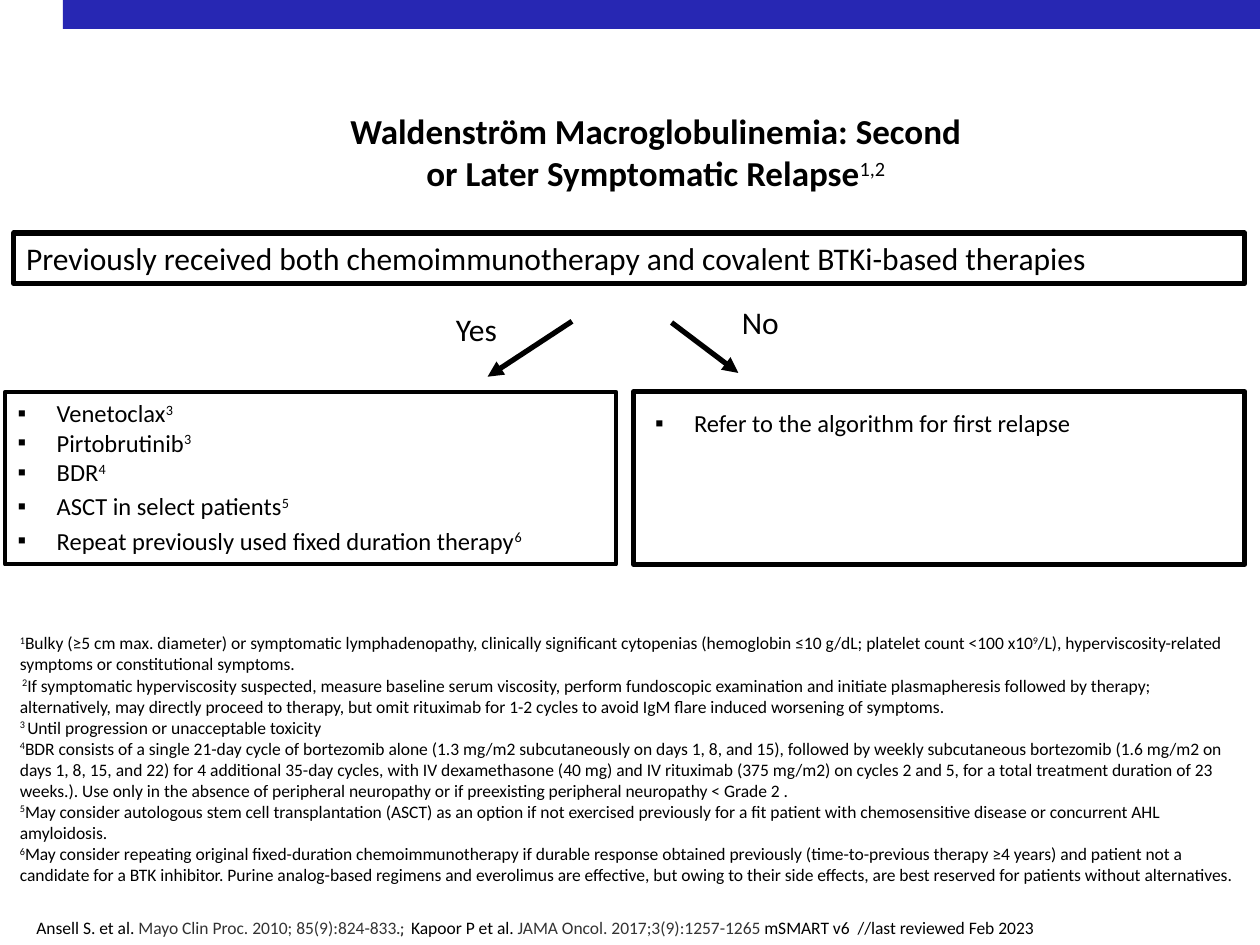
from dataclasses import dataclass

from lxml import etree
from pptx import Presentation
from pptx import util as u
from pptx.dml import color
from pptx.enum import shapes, text
from pptx.oxml import ns

Inches = u.Inches


@dataclass(frozen=True)
class Theme:
    """Colours, fonts and type sizes of the slide."""
    ink: str = "000000"
    citation: str = "333333"
    bar: str = "2727B3"
    font: str = "Calibri"
    separator_font: str = "Roboto"
    title: int = 20
    statement: int = 18
    item: int = 14
    note: int = 10
    separator: int = 8


THEME = Theme()

TREATMENTS = ["Venetoclax^3", "Pirtobrutinib^3", "BDR^4", "ASCT in select patients^5",
              "Repeat previously used fixed duration therapy^6"]
FOOTNOTES = [
    "^1^Bulky (≥5 cm max. diameter) or symptomatic lymphadenopathy, clinically significant "
    "cytopenias (hemoglobin ≤10 g/dL; platelet count <100 x10^9^/L), hyperviscosity-related "
    "symptoms or constitutional symptoms.",
    "^ 2^If symptomatic hyperviscosity suspected, measure baseline serum viscosity, perform "
    "fundoscopic examination and initiate plasmapheresis followed by therapy; alternatively, "
    "may directly proceed to therapy, but omit rituximab for 1-2 cycles to avoid IgM flare "
    "induced worsening of symptoms.",
    "^3 ^Until progression or unacceptable toxicity",
    "^4^BDR consists of a single 21-day cycle of bortezomib alone (1.3 mg/m2 subcutaneously on "
    "days 1, 8, and 15), followed by weekly subcutaneous bortezomib (1.6 mg/m2 on days 1, 8, "
    "15, and 22) for 4 additional 35-day cycles, with IV dexamethasone (40 mg) and IV rituximab "
    "(375 mg/m2) on cycles 2 and 5, for a total treatment duration of 23 weeks.). Use only in "
    "the absence of peripheral neuropathy or if preexisting peripheral neuropathy < Grade 2 .",
    "^5^May consider autologous stem cell transplantation (ASCT) as an option if not exercised "
    "previously for a fit patient with chemosensitive disease or concurrent AHL amyloidosis.",
    "^6^May consider repeating original fixed-duration chemoimmunotherapy if durable response "
    "obtained previously (time-to-previous therapy ≥4 years) and patient not a candidate for a "
    "BTK inhibitor. Purine analog-based regimens and everolimus are effective, but owing to "
    "their side effects, are best reserved for patients without alternatives.",
]
REFERENCES = [
    ("Ansell S. et al. ", {}),
    ("Mayo Clin Proc. 2010; 85(9):824-833", {"ink": THEME.citation}),
    (".;  ", {"ink": THEME.citation, "size": THEME.separator, "bold": True,
              "font": THEME.separator_font}),
    ("Kapoor P et al. ", {}),
    ("JAMA Oncol. 2017;3(9):1257-1265 ", {"ink": THEME.citation}),
    ("mSMART v6  //last reviewed Feb 2023", {}),
]


def write(paragraph, content, size=THEME.note, ink=THEME.ink, bold=False, font=THEME.font):
    """Add text whose parts between carets are superscript and never bold."""
    for index, part in enumerate(content.split("^")):
        if not part:
            continue
        raised = index % 2 == 1
        run = paragraph.add_run()
        run.text = part
        run.font.size = u.Pt(size)
        run.font.name = font
        run.font.bold = bold and not raised
        run.font.color.rgb = color.RGBColor.from_string(ink)
        if raised:
            run.font._element.set("baseline", "30000")


def place(shape, box):
    """Move a shape to a box of left, top, width and height in inches."""
    shape.left, shape.top, shape.width, shape.height = map(Inches, box)


def prepare(shape, anchor=text.MSO_ANCHOR.TOP, wrap=True):
    """Set wrapping and anchoring and return the text frame."""
    frame = shape.text_frame
    frame.word_wrap = wrap
    frame.auto_size = text.MSO_AUTO_SIZE.NONE
    frame.vertical_anchor = anchor
    return frame


def outline(shape, weight):
    """Give a shape a plain outline without a fill."""
    shape.fill.background()
    shape.line.color.rgb = color.RGBColor.from_string(THEME.ink)
    shape.line.width = u.Pt(weight)


def add_box(slide, box):
    """Add a rectangle without a shadow."""
    rectangle = slide.shapes.add_shape(shapes.MSO_SHAPE.RECTANGLE, *map(Inches, box))
    rectangle.shadow.inherit = False
    return rectangle


def add_text(slide, box, **options):
    """Add a text box and return its text frame."""
    return prepare(slide.shapes.add_textbox(*map(Inches, box)), **options)


def write_lines(frame, lines, bulleted=False, spaced_from=None, **style):
    """Write one paragraph per line, with optional bullets and spacing."""
    for index, line in enumerate(lines):
        paragraph = frame.paragraphs[0] if index == 0 else frame.add_paragraph()
        if bulleted:
            properties = paragraph._p.get_or_add_pPr()
            properties.set("marL", str(Inches(0.31)))
            properties.set("indent", str(-Inches(0.31)))
            etree.SubElement(properties, ns.qn("a:buFont")).set("typeface", "Arial")
            etree.SubElement(properties, ns.qn("a:buChar")).set("char", "▪")
        spaced = spaced_from is not None and index >= spaced_from
        paragraph.space_before = u.Pt(0.2 * THEME.item if spaced else 0)
        write(paragraph, line, **style)


def add_bar(slide, box):
    """Draw the coloured bar at the top."""
    bar = add_box(slide, box)
    bar.fill.solid()
    bar.fill.fore_color.rgb = color.RGBColor.from_string(THEME.bar)
    bar.line.fill.background()


def add_title(slide, box):
    """Fill the title placeholder."""
    title = slide.shapes.title
    place(title, box)
    frame = prepare(title)
    frame.paragraphs[0].alignment = text.PP_ALIGN.CENTER
    write(frame.paragraphs[0],
          "Waldenström Macroglobulinemia: Second or Later Symptomatic Relapse^1,2",
          size=THEME.title, bold=True)


def add_question(slide, box):
    """Draw the framed criterion that splits the pathway."""
    question = add_box(slide, box)
    outline(question, 3)
    frame = prepare(question, anchor=text.MSO_ANCHOR.MIDDLE)
    frame.paragraphs[0].alignment = text.PP_ALIGN.LEFT
    write(frame.paragraphs[0], "Previously received both chemoimmunotherapy and covalent "
          "BTKi-based therapies", size=THEME.statement)


def add_branch(slide, box, answer, start, end):
    """Draw an answer label and its arrow."""
    frame = add_text(slide, box, wrap=False)
    write(frame.paragraphs[0], answer, size=THEME.statement)
    arrow = slide.shapes.add_connector(shapes.MSO_CONNECTOR.STRAIGHT,
                                       *map(Inches, start + end))
    arrow.line.color.rgb = color.RGBColor.from_string(THEME.ink)
    arrow.line.width = u.Pt(3)
    etree.SubElement(arrow.line._get_or_add_ln(), ns.qn("a:tailEnd")).set("type", "triangle")
    etree.SubElement(arrow._element.spPr, ns.qn("a:effectLst"))


def add_treatments(slide, box):
    """Fill the body placeholder with the treatment options."""
    treatments = slide.placeholders[1]
    place(treatments, box)
    outline(treatments, 2.25)
    write_lines(prepare(treatments), TREATMENTS, bulleted=True, spaced_from=3, size=THEME.item)


def add_referral(slide, box):
    """Draw the framed referral to the first-relapse pathway."""
    left, top, width, height = box
    outline(add_box(slide, box), 3)
    frame = add_text(slide, (left + 0.07, top + 0.08, width, 0.94))
    write_lines(frame, ["Refer to the algorithm for first relapse"], bulleted=True,
                size=THEME.item)


def add_footnotes(slide, box):
    """Write the numbered footnotes."""
    write_lines(add_text(slide, box), FOOTNOTES)


def add_references(slide, box):
    """Write the source line."""
    paragraph = add_text(slide, box).paragraphs[0]
    for content, style in REFERENCES:
        write(paragraph, content, **style)


def main():
    """Build and save the slide."""
    deck = Presentation()
    deck.slide_width, deck.slide_height = Inches(10), Inches(7.5)
    slide = deck.slides.add_slide(deck.slide_layouts[1])
    add_bar(slide, (0.5, 0, 9.5, 0.23))
    add_title(slide, (2.58, 0.82, 5.25, 0.77))
    add_question(slide, (0.11, 1.85, 9.77, 0.4))
    add_branch(slide, (3.52, 2.41, 0.53, 0.4), "Yes", (4.54, 2.55), (3.87, 2.99))
    add_branch(slide, (5.79, 2.36, 0.52, 0.4), "No", (5.33, 2.56), (5.86, 2.96))
    add_treatments(slide, (0.04, 3.11, 4.85, 1.37))
    add_referral(slide, (5.03, 3.11, 4.85, 1.37))
    add_footnotes(slide, (0.06, 4.97, 9.87, 2.29))
    add_references(slide, (0.19, 7.23, 9.72, 0.27))
    deck.save("out.pptx")


if __name__ == "__main__":
    main()
